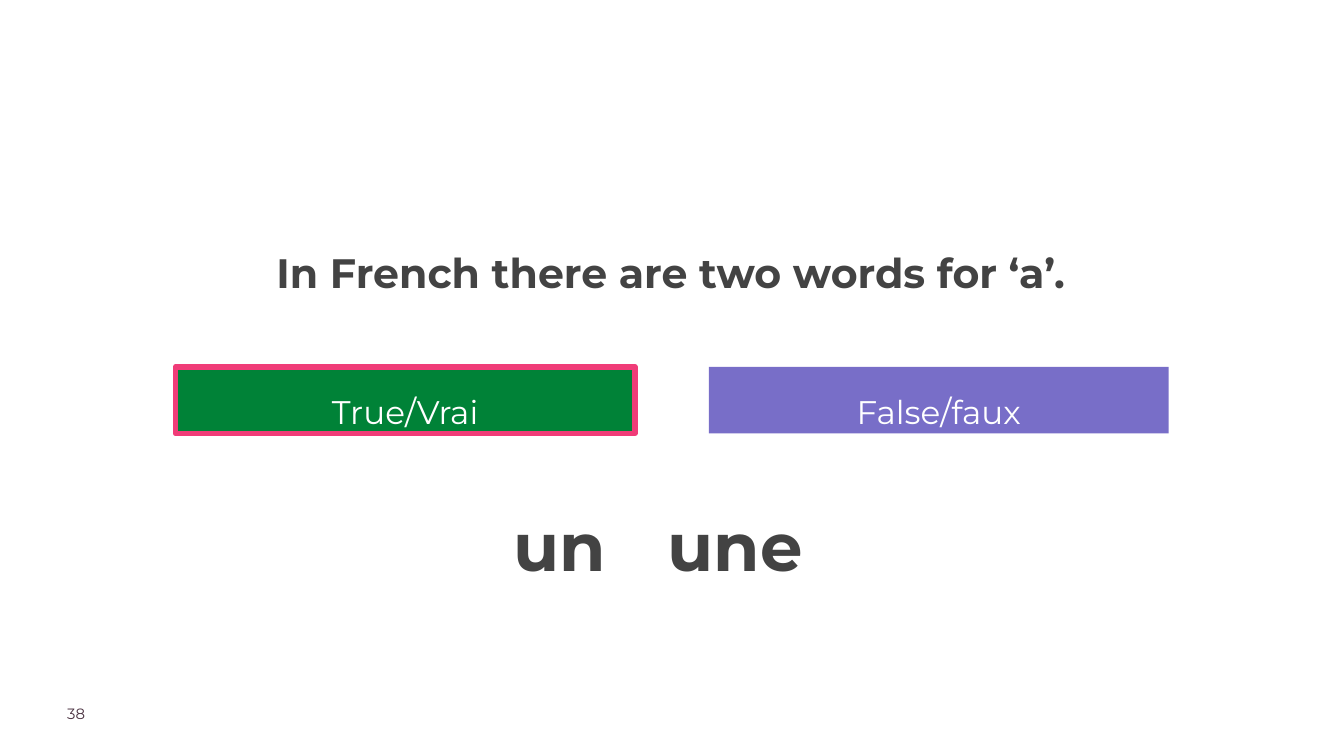
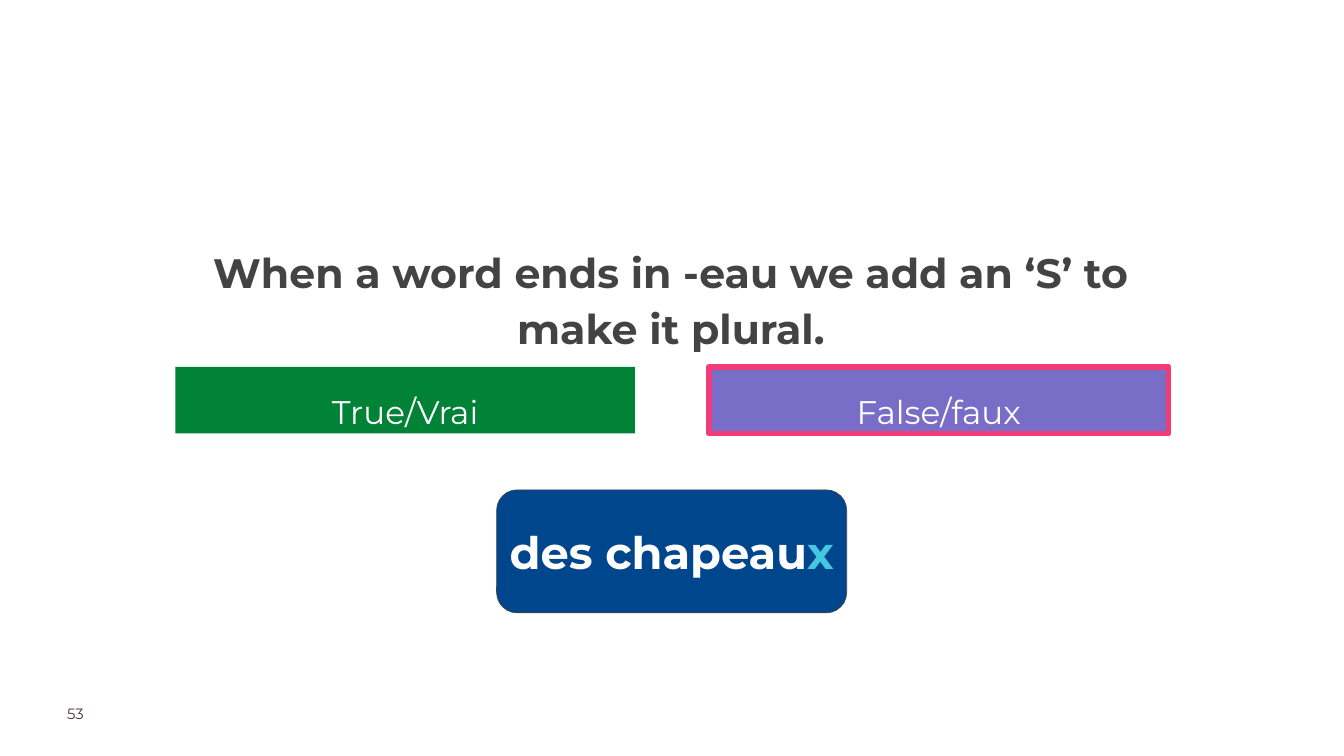
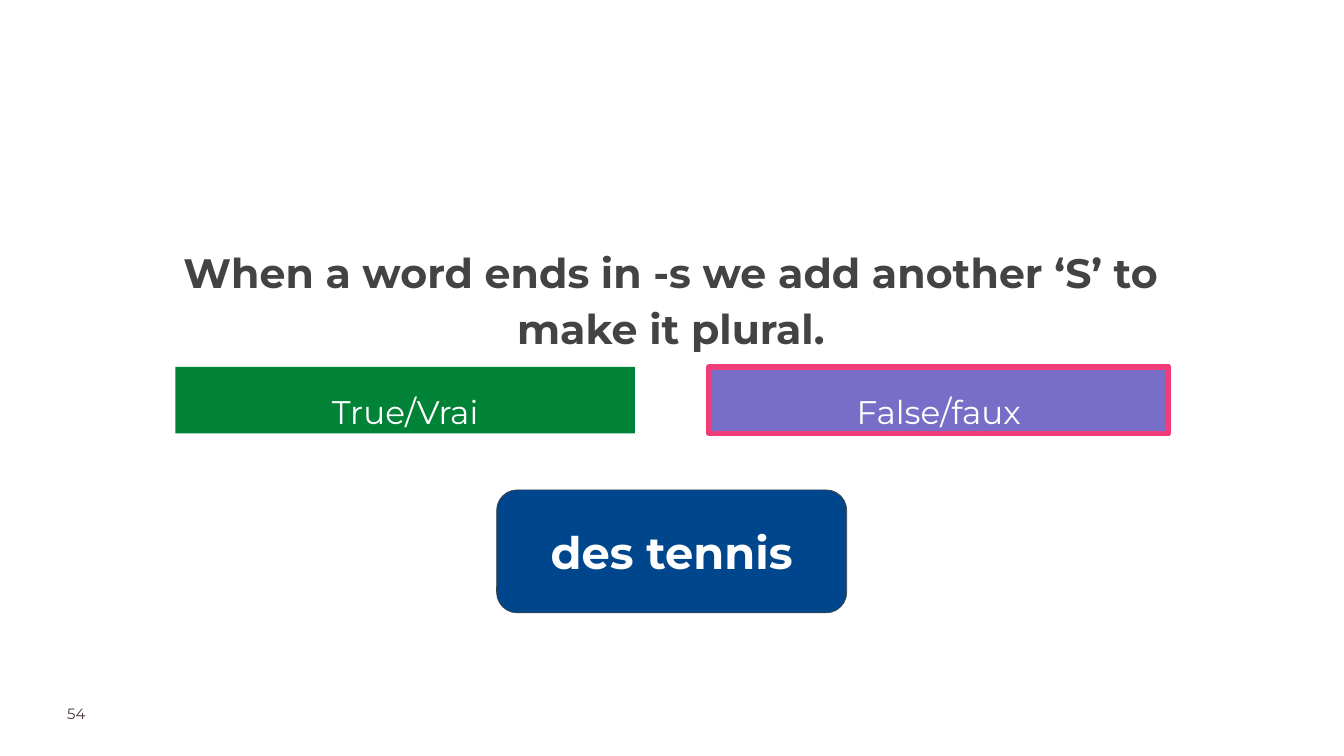
from pptx import Presentation
from pptx import util as u
from pptx.dml.color import RGBColor
from pptx.enum import shapes, text

COLORS = {
    "ink": "434343",
    "page": "4B3241",
    "white": "FFFFFF",
    "true": "008237",
    "false": "786EC8",
    "correct": "F03C78",
    "card": "00468C",
    "ending": "46C7E1",
}
FONT = "Montserrat"
COLUMNS, ROWS = 20, 11.25

ANSWERS = {"true": "True/Vrai", "false": "False/faux"}
ANSWER_LEFT, ANSWER_TOP, ANSWER_WIDTH, ANSWER_HEIGHT = 2.61, 5.46, 6.84, 0.99
ANSWER_STEP = 7.94


def color(name):
    return RGBColor.from_string(COLORS[name])


def write(shape, runs, size, bold=False, align=text.PP_ALIGN.LEFT, spacing=1.0,
          inset=0, anchor=text.MSO_ANCHOR.TOP):
    """Fill a shape with one paragraph of (words, colour name) runs."""
    frame = shape.text_frame
    frame.word_wrap = True
    frame.auto_size = text.MSO_AUTO_SIZE.NONE
    frame.vertical_anchor = anchor
    frame.margin_left = frame.margin_right = u.Inches(inset)
    frame.margin_top = frame.margin_bottom = u.Inches(inset)
    paragraph = frame.paragraphs[0]
    paragraph.alignment = align
    paragraph.line_spacing = spacing
    for words, color_name in runs:
        run = paragraph.add_run()
        run.text = words
        run.font.name = FONT
        run.font.size = u.Pt(size)
        run.font.bold = bold
        run.font.color.rgb = color(color_name)


class QuizDeck:
    def __init__(self):
        self.prs = Presentation()
        self.prs.slide_width, self.prs.slide_height = u.Inches(20), u.Inches(11.25)
        self.slide = None

    def area(self, left, top, width, height):
        """Turn grid columns and rows into slide lengths."""
        column = self.prs.slide_width / COLUMNS
        row = self.prs.slide_height / ROWS
        return (u.Emu(round(left * column)), u.Emu(round(top * row)),
                u.Emu(round(width * column)), u.Emu(round(height * row)))

    def box(self, at, fill=None, line=None, line_width=0.75,
            kind=shapes.MSO_SHAPE.RECTANGLE):
        shape = self.slide.shapes.add_shape(kind, *self.area(*at))
        shape.shadow.inherit = False
        if fill:
            shape.fill.solid()
            shape.fill.fore_color.rgb = color(fill)
        else:
            shape.fill.background()
        if line:
            shape.line.color.rgb = color(line)
            shape.line.width = u.Pt(line_width)
        else:
            shape.line.fill.background()
        return shape

    def label(self, at, words, color_name, **style):
        shape = self.slide.shapes.add_textbox(*self.area(*at))
        write(shape, [(words, color_name)], **style)

    def statement(self, words):
        title = self.slide.shapes.title
        title.left, title.top, title.width, title.height = self.area(2.58, 3.57, 14.81, 1.78)
        write(title, [(words, "ink")], size=44, bold=True,
              align=text.PP_ALIGN.CENTER, spacing=1.15)

    def answers(self, correct):
        for index, (name, words) in enumerate(ANSWERS.items()):
            at = (ANSWER_LEFT + index * ANSWER_STEP, ANSWER_TOP, ANSWER_WIDTH, ANSWER_HEIGHT)
            write(self.box(at, fill=name), [(words, "white")], size=35,
                  align=text.PP_ALIGN.CENTER, spacing=1.3, inset=0.2)
            if name == correct:
                self.box(at, line="correct", line_width=6)

    def question(self, page, words, correct):
        """Start a slide with its statement, both answers and page number."""
        self.slide = self.prs.slides.add_slide(self.prs.slide_layouts[5])
        self.statement(words)
        self.answers(correct)
        self.label((1, 10.48, 1.57, 0.39), page, "page", size=16)

    def article(self, left, width, words):
        self.label((left, 7.33, width, 1.78), words, "ink", size=72, bold=True, spacing=1.15)

    def example(self, *runs):
        card = self.box((7.39, 7.29, 5.21, 1.83), fill="card", line="ink",
                        kind=shapes.MSO_SHAPE.ROUNDED_RECTANGLE)
        write(card, runs, size=48, bold=True, align=text.PP_ALIGN.CENTER,
              inset=0.1, anchor=text.MSO_ANCHOR.MIDDLE)


def main():
    deck = QuizDeck()

    deck.question("38", "In French there are two words for ‘a’.", "true")
    deck.article(7.64, 1.57, "un")
    deck.article(9.93, 2.58, "une")

    deck.question("53", "When a word ends in -eau we add an ‘S’ to make it plural.", "false")
    deck.example(("des chapeau", "white"), ("x", "ending"))

    deck.question("54", "When a word ends in -s we add another ‘S’ to make it plural.", "false")
    deck.example(("des tennis", "white"))

    deck.prs.save("out.pptx")


if __name__ == "__main__":
    main()
